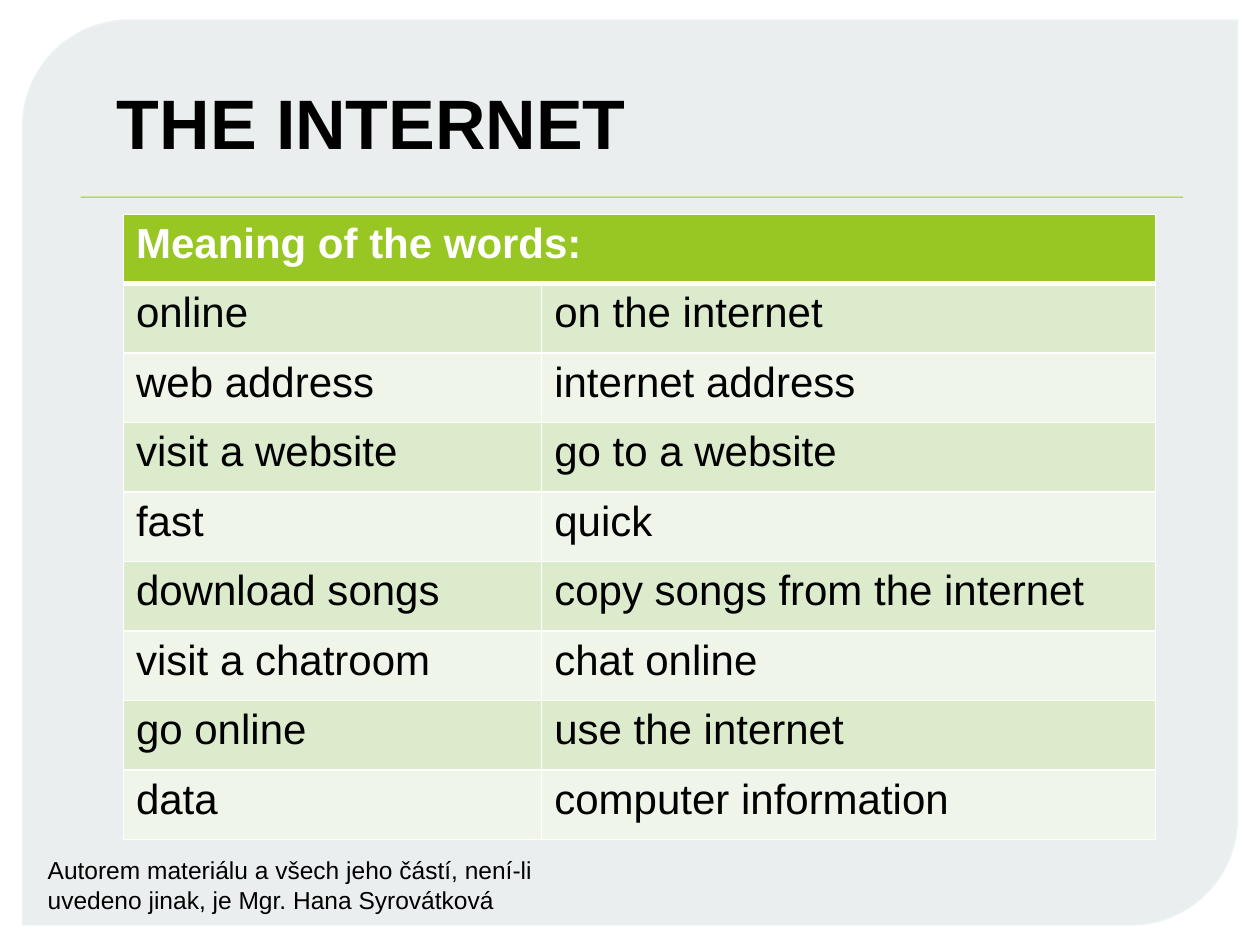
import pptx
import pptx.util
import pptx.dml.color
import pptx.enum.shapes
import pptx.oxml
from lxml import etree

deck = pptx.Presentation()
deck.slide_width = pptx.util.Inches(10)
deck.slide_height = pptx.util.Inches(7.5)
slide = deck.slides.add_slide(deck.slide_layouts[6])
W, H = deck.slide_width, deck.slide_height
NS = "http://schemas.openxmlformats.org/drawingml/2006/main"


def paint(part, code):
    if hasattr(part, "solid"):
        part.solid()
        part = part.fore_color
    part.rgb = pptx.dml.color.RGBColor.from_string(code)


def write(frame, text, style, code):
    frame.word_wrap = True
    run = frame.paragraphs[0].add_run()
    run.text = text
    for key, val in style.items():
        setattr(run.font, key, val)
    paint(run.font.color, code)


kinds = pptx.enum.shapes.MSO_SHAPE
panel = slide.shapes.add_shape(
    kinds.ROUND_2_DIAG_RECTANGLE,
    int(W * 0.018), int(H * 0.0213), int(W * 0.964), int(H * 0.9573))
panel.adjustments[0] = 0.118
panel.adjustments[1] = 0
paint(panel.fill, "DFE5E6")
tint = panel.fill._xPr.find(f".//{{{NS}}}srgbClr")
etree.SubElement(tint, f"{{{NS}}}alpha", val="65000")
paint(panel.line.fill, "EBF2F3")
panel.line.width = pptx.util.Pt(0.87)

rule = slide.shapes.add_shape(
    kinds.RECTANGLE, int(W * 0.064), int(H * 0.208), int(W * 0.875), int(H * 0.0013))
paint(rule.fill, "98C723")
rule.line.fill.background()
for shape in (panel, rule):
    shape.shadow.inherit = False

words = [
    ("Meaning of the words:", ""),
    ("online", "on the internet"),
    ("web address", "internet address"),
    ("visit a website", "go to a website"),
    ("fast", "quick"),
    ("download songs", "copy songs from the internet"),
    ("visit a chatroom", "chat online"),
    ("go online", "use the internet"),
    ("data", "computer information"),
]
row = int(H * 0.0735)
cols = [int(W * 0.332), int(W * 0.487)]
table = slide.shapes.add_table(
    len(words), 2, int(W * 0.098), int(H * 0.2267), sum(cols), row * len(words)).table
for col, wide in zip(table.columns, cols):
    col.width = wide
table.cell(0, 0).merge(table.cell(0, 1))

for r, pair in enumerate(words):
    table.rows[r].height = row
    head = r == 0
    shade = "98C723" if head else ("EFF5E8", "DDEBCD")[r % 2]
    style = {"name": "Arial", "size": pptx.util.Pt(24), "bold": head}
    for c, text in enumerate(pair):
        cell = table.cell(r, c)
        props = cell._tc.get_or_add_tcPr()
        for side in "LRTB":
            thick = (r, side) in ((0, "B"), (1, "T"))
            props.append(pptx.oxml.parse_xml(
                f'<a:ln{side} xmlns:a="{NS}" w="{38100 if thick else 12700}">'
                f'<a:solidFill><a:srgbClr val="FFFFFF"/></a:solidFill></a:ln{side}>'))
        paint(cell.fill, shade)
        if text:
            write(cell.text_frame, text, style, "FFFFFF" if head else "000000")

notes = [
    ("THE INTERNET", 0.083, 0.0773, 0.559, 0.1027, 40, True),
    ("Autorem materiálu a všech jeho částí, není-li uvedeno jinak, je Mgr. Hana Syrovátková",
     0.028, 0.8987, 0.429, 0.0733, 14, False),
]
for text, x, y, w, h, size, bold in notes:
    box = slide.shapes.add_textbox(int(W * x), int(H * y), int(W * w), int(H * h))
    style = {"name": "Arial", "size": pptx.util.Pt(size), "bold": bold}
    write(box.text_frame, text, style, "000000")

deck.save("out.pptx")
